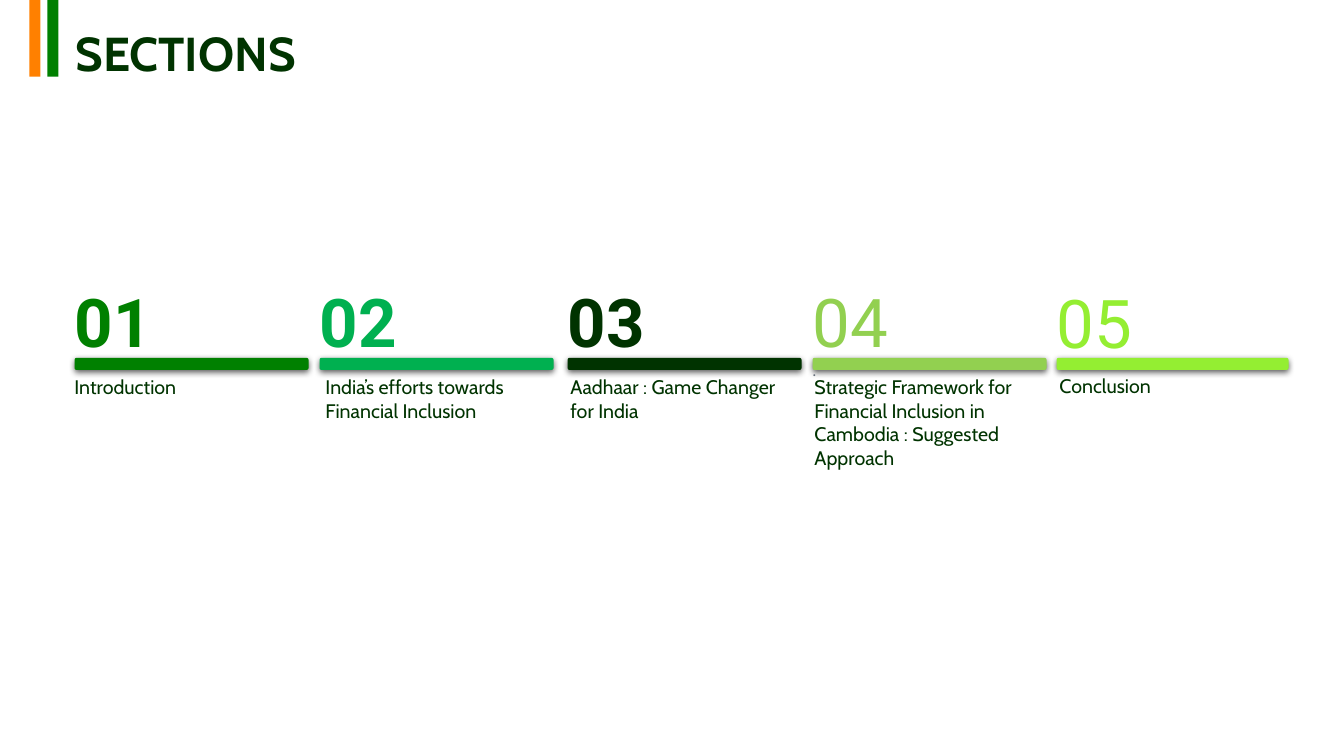
from dataclasses import dataclass

from lxml.etree import SubElement
from pptx import Presentation
from pptx.dml.color import RGBColor
from pptx.enum.shapes import MSO_SHAPE as Preset
from pptx.enum.text import MSO_ANCHOR as Anchor, MSO_AUTO_SIZE as AutoSize
from pptx.oxml.ns import qn
from pptx.shapes.autoshape import Shape
from pptx.slide import Slide
from pptx.text.text import TextFrame
from pptx.util import Emu, Pt

PX = 9144  # 100 px to the inch


@dataclass(frozen=True)
class Theme:
    orange: str = "FF8000"
    green: str = "008000"
    emerald: str = "00B050"
    forest: str = "003300"
    light: str = "92D050"
    lime: str = "94EE32"
    gray: str = "656D78"
    text_font: str = "Cabin"
    number_font: str = "Roboto"
    note_font: str = "Lato"
    title_size: int = 34
    number_size: int = 48
    caption_size: int = 14
    note_size: int = 11


@dataclass(frozen=True)
class Area:
    left: int
    top: int
    width: int
    height: int

    def emu(self) -> tuple[Emu, ...]:
        sides = (self.left, self.top, self.width, self.height)
        return tuple(Emu(side * PX) for side in sides)


@dataclass(frozen=True)
class Section:
    color: str
    bar: Area
    number: Area
    caption: Area
    text: str
    bold: bool = False
    wrap: bool = True
    note: str = ""


THEME = Theme()

STRIPES = [
    (Area(29, 0, 11, 76), THEME.orange),
    (Area(47, 0, 11, 76), THEME.green),
]

SECTIONS = [
    Section(THEME.green, Area(74, 355, 232, 12), Area(74, 278, 166, 192),
            Area(64, 367, 126, 34), "Introduction", bold=True, wrap=False),
    Section(THEME.emerald, Area(317, 355, 232, 12), Area(317, 278, 180, 192),
            Area(313, 367, 237, 81),
            "India’s efforts towards Financial Inclusion", bold=True),
    Section(THEME.forest, Area(563, 355, 232, 12), Area(563, 278, 159, 192),
            Area(556, 367, 237, 57),
            "Aadhaar : Game Changer for India", bold=True),
    Section(THEME.light, Area(806, 355, 232, 12), Area(806, 278, 185, 193),
            Area(798, 367, 237, 151),
            "Strategic Framework for Financial Inclusion in Cambodia : "
            "Suggested Approach", note="."),
    Section(THEME.lime, Area(1048, 355, 230, 12), Area(1048, 279, 144, 192),
            Area(1041, 366, 113, 34), "Conclusion", wrap=False),
]


def add_block(page: Slide, preset: Preset, area: Area, color: str) -> Shape:
    block = page.shapes.add_shape(preset, *area.emu())
    block.shadow.inherit = False
    block.fill.solid()
    block.fill.fore_color.rgb = RGBColor.from_string(color)
    block.line.fill.background()
    return block


def add_drop_shadow(block: Shape) -> None:
    effects = block._element.spPr.find(qn("a:effectLst"))
    shadow = SubElement(effects, qn("a:outerShdw"), blurRad=str(Pt(4.5)),
                        dist=str(Pt(1.5)), dir="5400000", algn="t",
                        rotWithShape="0")
    black = SubElement(shadow, qn("a:srgbClr"), val="000000")
    SubElement(black, qn("a:alpha"), val="63000")


def add_frame(page: Slide, area: Area, wrap: bool = True) -> TextFrame:
    frame = page.shapes.add_textbox(*area.emu()).text_frame
    frame.word_wrap = wrap
    return frame


def write(frame: TextFrame, text: str, font: str, size: int, color: str,
          bold: bool = False) -> None:
    """Fill the empty first paragraph, or add one after it."""
    first = frame.paragraphs[0]
    para = frame.add_paragraph() if first.runs else first
    para.add_run().text = text
    para.font.name = font
    para.font.size = Pt(size)
    para.font.bold = bold
    para.font.color.rgb = RGBColor.from_string(color)


def add_title(page: Slide) -> None:
    frame = add_frame(page, Area(65, 28, 1225, 55))
    frame.vertical_anchor = Anchor.MIDDLE
    write(frame, "SECTIONS", THEME.text_font, THEME.title_size,
          THEME.forest, bold=True)
    frame.paragraphs[0].line_spacing = 0.9


def add_section(page: Slide, index: int, section: Section) -> None:
    # Coloured bar
    bar = add_block(page, Preset.ROUNDED_RECTANGLE, section.bar, section.color)
    add_drop_shadow(bar)

    # Number above the bar
    number = add_frame(page, section.number)
    number.margin_left = number.margin_top = number.margin_bottom = 0
    write(number, f"{index:02}", THEME.number_font, THEME.number_size,
          section.color, section.bold)
    if section.note:
        write(number, section.note, THEME.note_font, THEME.note_size,
              THEME.gray)

    # Caption below the bar
    caption = add_frame(page, section.caption, section.wrap)
    caption.auto_size = AutoSize.SHAPE_TO_FIT_TEXT
    write(caption, section.text, THEME.text_font, THEME.caption_size,
          THEME.forest)


def main() -> None:
    deck = Presentation()
    deck.slide_width, deck.slide_height = Emu(1333 * PX), Emu(750 * PX)
    page = deck.slides.add_slide(deck.slide_layouts[6])

    # Heading
    for area, color in STRIPES:
        add_block(page, Preset.RECTANGLE, area, color)
    add_title(page)

    # Five sections
    for index, section in enumerate(SECTIONS, start=1):
        add_section(page, index, section)

    deck.save("out.pptx")


if __name__ == "__main__":
    main()
